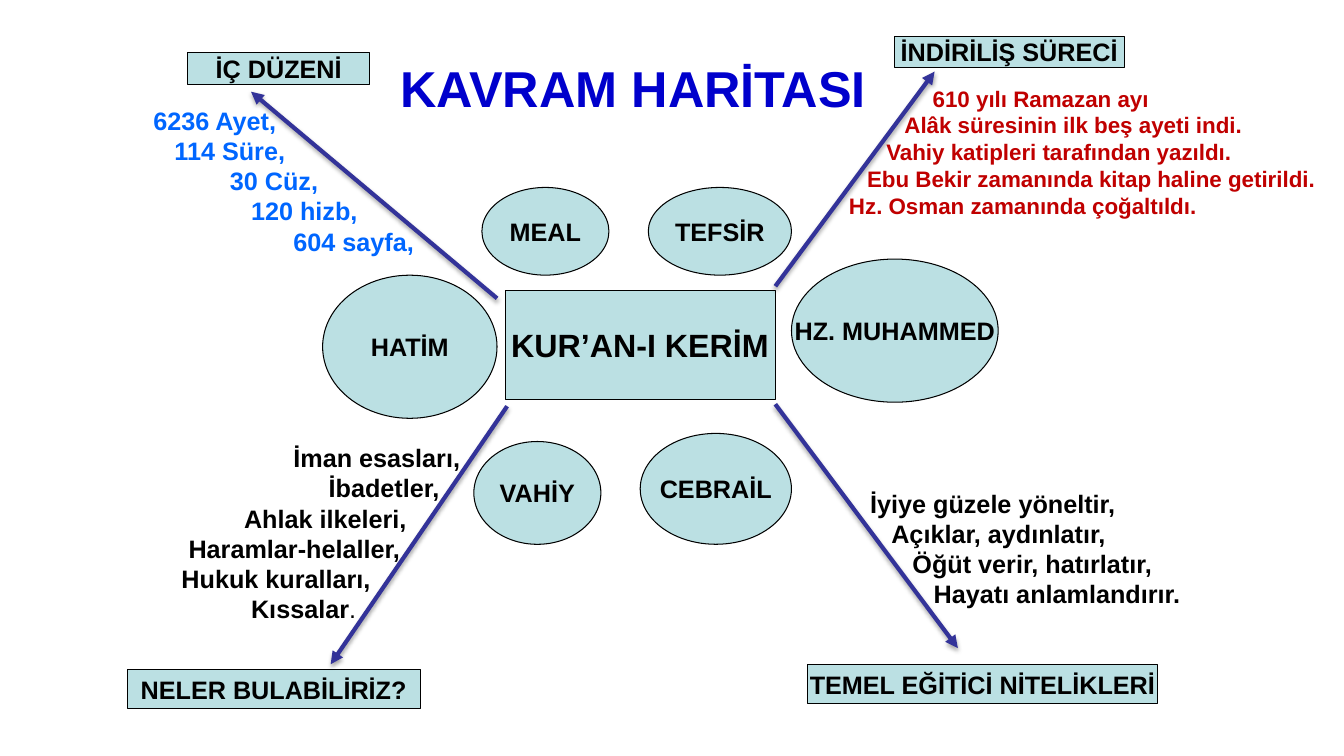
from typing import NamedTuple

from lxml import etree
from pptx import Presentation
from pptx import util as u
from pptx.dml.color import RGBColor
from pptx.enum import shapes, text
from pptx.oxml import ns

BLACK = RGBColor(0x00, 0x00, 0x00)
BLUE = RGBColor(0x00, 0x66, 0xFF)
NAVY = RGBColor(0x00, 0x00, 0xCC)
RED = RGBColor(0xC0, 0x00, 0x00)
INDIGO = RGBColor(0x33, 0x33, 0x99)
AQUA = RGBColor(0xBB, 0xE0, 0xE3)

RECT = shapes.MSO_SHAPE.RECTANGLE
OVAL = shapes.MSO_SHAPE.OVAL
SHADOW = (
    f'<a:effectLst {ns.nsdecls("a")}>'
    '<a:outerShdw blurRad="40000" dist="23000" dir="5400000" rotWithShape="0">'
    '<a:srgbClr val="000000"><a:alpha val="35000"/></a:srgbClr>'
    '</a:outerShdw></a:effectLst>'
)


class Box(NamedTuple):
    left: float
    top: float
    width: float
    height: float


class Node(NamedTuple):
    words: str
    box: Box
    kind: shapes.MSO_SHAPE = RECT
    size: int = 18


class Line(NamedTuple):
    words: str
    indent: float = 0


class Note(NamedTuple):
    box: Box
    lines: list[Line]
    color: RGBColor = BLACK
    size: int = 18


class Arrow(NamedTuple):
    x1: float
    y1: float
    x2: float
    y2: float


NODES = [
    Node("KUR’AN-I KERİM", Box(5.01, 2.88, 2.68, 1.08), size=23),
    Node("İNDİRİLİŞ SÜRECİ", Box(8.87, 0.36, 2.28, 0.31)),
    Node("İÇ DÜZENİ", Box(1.86, 0.52, 1.81, 0.32)),
    Node("NELER BULABİLİRİZ?", Box(1.26, 6.64, 2.91, 0.39)),
    Node("TEMEL EĞİTİCİ NİTELİKLERİ", Box(8.01, 6.59, 3.47, 0.39)),
    Node("MEAL", Box(4.78, 1.86, 1.26, 0.87), OVAL),
    Node("TEFSİR", Box(6.43, 1.86, 1.42, 0.87), OVAL),
    Node("VAHİY", Box(4.7, 4.38, 1.26, 1.02), OVAL),
    Node("CEBRAİL", Box(6.35, 4.3, 1.5, 1.1), OVAL),
    Node("HZ. MUHAMMED", Box(7.85, 2.57, 2.05, 1.42), OVAL),
    Node("HATİM", Box(3.2, 2.73, 1.73, 1.42), OVAL),
]

NOTES = [
    Note(Box(1.42, 0.99, 3.16, 1.9), [
        Line("6236 Ayet,"),
        Line("114 Süre,", 0.21),
        Line("30 Cüz,", 0.76),
        Line("120 hizb,", 0.97),
        Line("604 sayfa,", 1.39),
    ], BLUE),
    Note(Box(8.32, 0.79, 5.01, 1.45), [
        Line("610 yılı Ramazan ayı", 0.83),
        Line("Alâk süresinin ilk beş ayeti indi.", 0.55),
        Line("Vahiy katipleri tarafından yazıldı.", 0.37),
        Line("Ebu Bekir zamanında kitap haline getirildi.", 0.18),
        Line("Hz. Osman zamanında çoğaltıldı."),
    ], RED, 16),
    Note(Box(1.42, 4.34, 5.23, 1.92), [
        Line("İman esasları,", 1.39),
        Line("İbadetler,", 1.74),
        Line("Ahlak ilkeleri,", 0.9),
        Line("Haramlar-helaller,", 0.35),
        Line("Hukuk kuralları,", 0.28),
        Line("Kıssalar", 0.97),
    ]),
    Note(Box(8.32, 4.79, 3.51, 1.31), [
        Line("İyiye güzele yöneltir,", 0.21),
        Line("Açıklar, aydınlatır,", 0.42),
        Line("Öğüt verir, hatırlatır,", 0.63),
        Line("Hayatı anlamlandırır.", 0.84),
    ]),
]

ARROWS = [
    Arrow(4.93, 2.96, 2.49, 0.91),
    Arrow(7.69, 2.84, 9.27, 0.71),
    Arrow(5.03, 4.03, 3.28, 6.59),
    Arrow(7.69, 4.01, 9.5, 6.43),
]


def write(par, words: str, *, size: int = 18, color: RGBColor = BLACK,
          bold: bool = True, align=text.PP_ALIGN.CENTER) -> None:
    """Append a formatted run to a paragraph."""
    par.alignment = align
    run = par.add_run()
    run.text = words
    run.font.name = "Arial"
    run.font.size = u.Pt(size)
    run.font.bold = bold
    run.font.color.rgb = color


def place(shape, box: Box) -> None:
    shape.left, shape.top, shape.width, shape.height = map(u.Inches, box)


def draw_node(slide, node: Node) -> None:
    shape = slide.shapes.add_shape(node.kind, *map(u.Inches, node.box))
    shape.shadow.inherit = False
    shape.fill.solid()
    shape.fill.fore_color.rgb = AQUA
    shape.line.color.rgb = BLACK
    shape.line.width = u.Pt(0.75)
    frame = shape.text_frame
    frame.word_wrap = False
    frame.vertical_anchor = text.MSO_ANCHOR.MIDDLE
    write(frame.paragraphs[0], node.words, size=node.size)


def fill_note(holder, note: Note) -> None:
    place(holder, note.box)
    frame = holder.text_frame
    frame.word_wrap = True
    frame.auto_size = text.MSO_AUTO_SIZE.NONE
    frame.vertical_anchor = text.MSO_ANCHOR.TOP
    for i, line in enumerate(note.lines):
        par = frame.add_paragraph() if i else frame.paragraphs[0]
        par.space_before = u.Pt(0)
        props = par._p.get_or_add_pPr()
        props.set("marL", str(u.Inches(line.indent)))
        props.set("indent", "0")
        etree.SubElement(props, ns.qn("a:buNone"))
        write(par, line.words, size=note.size, color=note.color,
              align=text.PP_ALIGN.LEFT)


def draw_arrow(slide, arrow: Arrow) -> None:
    link = slide.shapes.add_connector(
        shapes.MSO_CONNECTOR.STRAIGHT, *map(u.Inches, arrow))
    link.line.color.rgb = INDIGO
    link.line.width = u.Pt(3)
    props = link._element.spPr
    etree.SubElement(props.find(ns.qn("a:ln")), ns.qn("a:tailEnd"), type="triangle")
    props.append(etree.fromstring(SHADOW))


def main() -> None:
    deck = Presentation()
    deck.slide_width, deck.slide_height = u.Inches(13.33), u.Inches(7.5)
    # The comparison layout holds a title and four body placeholders.
    slide = deck.slides.add_slide(deck.slide_layouts[4])

    title = slide.shapes.title
    place(title, Box(3.83, 0.52, 4.9, 0.7))
    title.text_frame.word_wrap = False
    title.text_frame.auto_size = text.MSO_AUTO_SIZE.NONE
    write(title.text_frame.paragraphs[0], "KAVRAM HARİTASI", size=36, color=NAVY)

    holders = [slide.placeholders[i] for i in range(1, 5)]
    for holder, note in zip(holders, NOTES):
        fill_note(holder, note)
    write(holders[2].text_frame.paragraphs[-1], ".", bold=False,
          align=text.PP_ALIGN.LEFT)

    for node in NODES:
        draw_node(slide, node)
    for arrow in ARROWS:
        draw_arrow(slide, arrow)
    deck.save("out.pptx")


if __name__ == "__main__":
    main()
